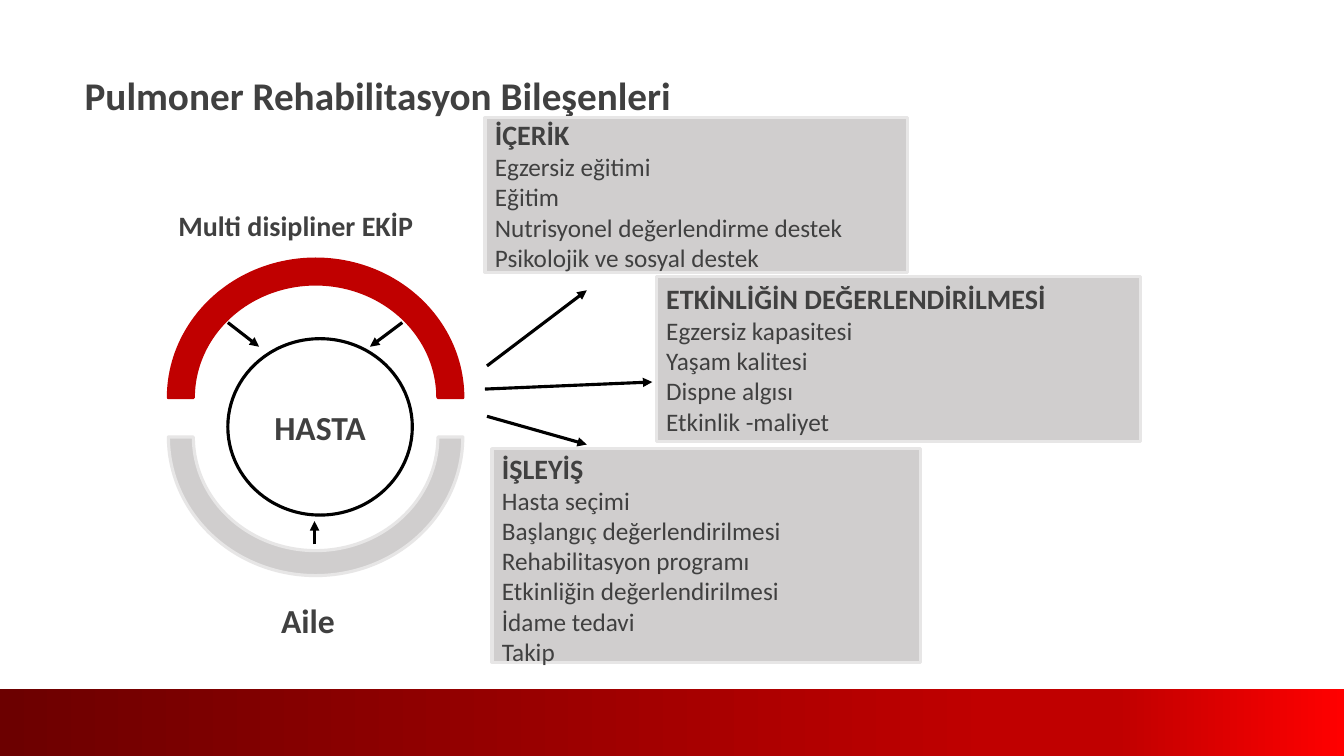
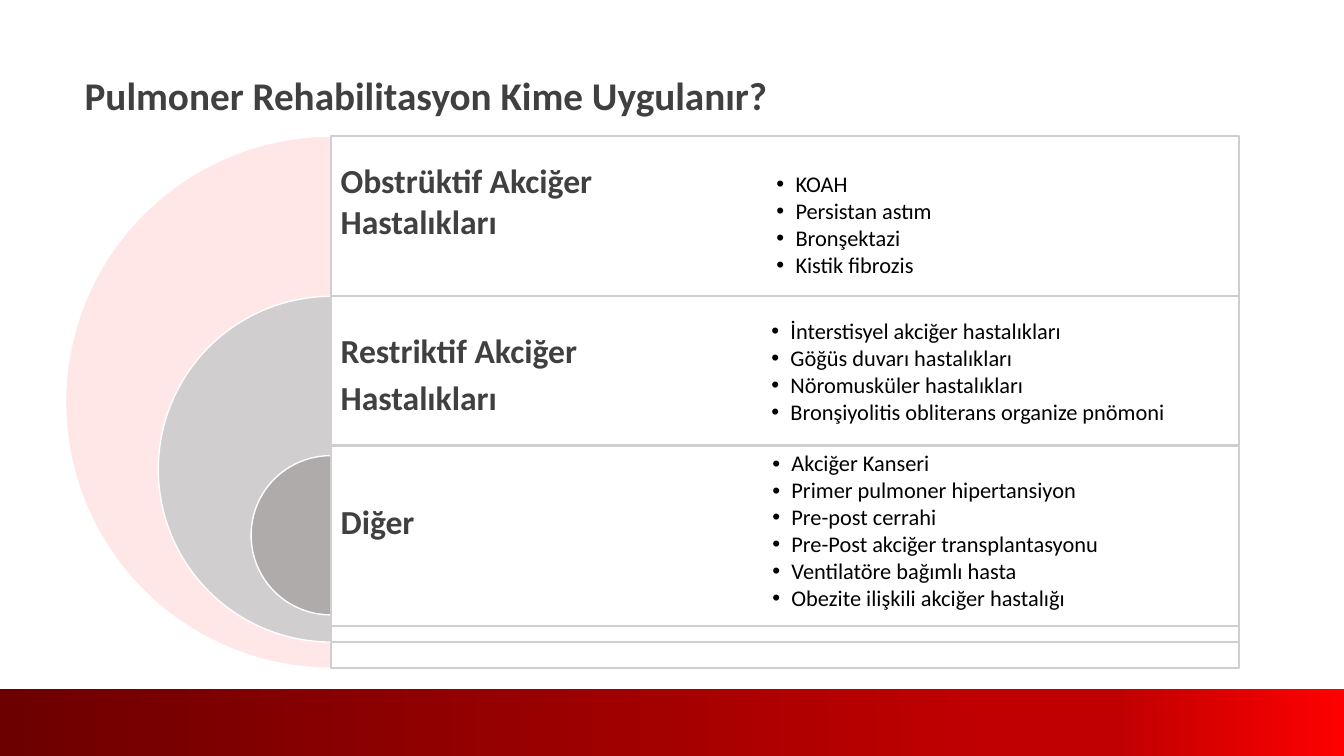
from lxml import etree
from pptx import Presentation
from pptx.dml.color import RGBColor
from pptx.enum import shapes, text
from pptx.oxml.ns import qn
from pptx.util import Inches, Pt

INK = RGBColor(0x40, 0x40, 0x40)
BLACK = RGBColor(0, 0, 0)
WHITE = RGBColor(0xFF, 0xFF, 0xFF)
RED = RGBColor(0xC0, 0, 0)
DARK_RED = RGBColor(0x6C, 0, 0)
BRIGHT_RED = RGBColor(0xFF, 0, 0)
PINK = RGBColor(0xFF, 0xE7, 0xE7)
GREY = RGBColor(0xD0, 0xCE, 0xCE)
PALE_GREY = RGBColor(0xE7, 0xE6, 0xE6)
MID_GREY = RGBColor(0xAF, 0xAB, 0xAB)
FONT = "Calibri"
BAND_STOPS = [(0, DARK_RED), (74, RED), (83, RED), (100, BRIGHT_RED)]
SHAPE = shapes.MSO_SHAPE
TOP, MIDDLE = text.MSO_ANCHOR.TOP, text.MSO_ANCHOR.MIDDLE
LEFT, CENTER = text.PP_ALIGN.LEFT, text.PP_ALIGN.CENTER


def write(tf, lines, size=18, bold=False, color=INK, head=None, align=LEFT,
          anchor=TOP, margins=(0.1, 0.05, 0.1, 0.05), spacing=1.0, after=0, bullet=False):
    tf.word_wrap = True
    tf.auto_size = text.MSO_AUTO_SIZE.NONE
    tf.vertical_anchor = anchor
    tf.margin_left, tf.margin_top, tf.margin_right, tf.margin_bottom = map(Inches, margins)
    for i, line in enumerate(lines):
        p = tf.paragraphs[0] if i == 0 else tf.add_paragraph()
        p.alignment = align
        p.line_spacing = spacing
        p.space_before = Pt(0)
        p.space_after = Pt(after)
        if bullet:
            pPr = p._p.get_or_add_pPr()
            pPr.set("marL", str(Inches(0.19)))
            pPr.set("indent", str(-Inches(0.19)))
            etree.SubElement(pPr, qn("a:buFont")).set("typeface", "Arial")
            etree.SubElement(pPr, qn("a:buChar")).set("char", "•")
        r = p.add_run()
        r.text = line
        is_head = head is not None and i == 0
        r.font.name = FONT
        r.font.size = Pt(head if is_head else size)
        r.font.bold = bold or is_head
        r.font.color.rgb = color


def draw(s, kind, at, fill=None, line=None, width=2.25):
    sp = s.shapes.add_shape(kind, *map(Inches, at))
    sp.shadow.inherit = False
    if fill is None:
        sp.fill.background()
    else:
        sp.fill.solid()
        sp.fill.fore_color.rgb = fill
    if line is None:
        sp.line.fill.background()
    else:
        sp.line.color.rgb = line
        sp.line.width = Pt(width)
    return sp


prs = Presentation()
prs.slide_width, prs.slide_height = Inches(13.33), Inches(7.5)

slides = []
for layout, title in [(5, "Pulmoner Rehabilitasyon Bileşenleri"),
                      (4, "Pulmoner Rehabilitasyon Kime Uygulanır?")]:
    s = prs.slides.add_slide(prs.slide_layouts[layout])
    sp = s.shapes.title
    sp.left, sp.top, sp.width, sp.height = map(Inches, (0.74, 0.66, 10, 0.57))
    write(sp.text_frame, [title], size=28, bold=True)
    band = draw(s, SHAPE.RECTANGLE, (0, 6.84, 13.33, 0.66))
    band.fill.gradient()
    band.fill.gradient_angle = 0
    stops = band._element.spPr.find(".//" + qn("a:gsLst"))
    for stop in list(stops):
        stops.remove(stop)
    for position, color in BAND_STOPS:
        stop = etree.SubElement(stops, qn("a:gs"), pos=str(position * 1000))
        etree.SubElement(stop, qn("a:srgbClr"), val=str(color))
    slides.append(s)
components, patients = slides

s = components
for top, color, outline, angle in [(2.57, RED, RED, 0), (2.96, GREY, PALE_GREY, 180)]:
    arc = draw(s, SHAPE.BLOCK_ARC, (1.67, top, 2.92, 2.75), color, outline)
    arc.adjustments[2] = 0.09
    arc.rotation = angle

patient = draw(s, SHAPE.OVAL, (2.26, 3.36, 1.83, 1.75), line=BLACK)
write(patient.text_frame, ["HASTA"], size=24, bold=True, align=CENTER, anchor=MIDDLE)

for label, size, at in [("Multi disipliner EKİP", 20, (1.67, 2.02, 2.7, 0.44)),
                        ("Aile", 24, (2.69, 5.9, 0.9, 0.5))]:
    sp = s.shapes.add_textbox(*map(Inches, at))
    write(sp.text_frame, [label], size=size, bold=True)

panels = [
    ((6.51, 2.74, 4.8, 1.64), 0.05, 0.05,
     ["ETKİNLİĞİN DEĞERLENDİRİLMESİ", "Egzersiz kapasitesi", "Yaşam kalitesi",
      "Dispne algısı", "Etkinlik -maliyet"]),
    ((4.81, 1.17, 4.19, 1.53), 0.05, 0.05,
     ["İÇERİK", "Egzersiz eğitimi", "Eğitim", "Nutrisyonel değerlendirme destek",
      "Psikolojik ve sosyal destek"]),
    ((4.88, 4.45, 4.25, 2.12), 0.07, 0,
     ["İŞLEYİŞ", "Hasta seçimi", "Başlangıç değerlendirilmesi", "Rehabilitasyon programı",
      "Etkinliğin değerlendirilmesi", "İdame tedavi", "Takip"]),
]
for at, above, below, lines in panels:
    sp = draw(s, SHAPE.RECTANGLE, at, GREY, PALE_GREY)
    write(sp.text_frame, lines, head=20, anchor=MIDDLE, margins=(0.1, above, 0.1, below))

for ends in [(2.26, 3.2, 2.57, 3.44), (3.99, 3.2, 3.67, 3.44), (3.12, 5.4, 3.12, 5.17),
             (4.83, 3.63, 5.82, 2.88), (4.81, 3.86, 6.47, 3.79), (4.83, 4.13, 5.82, 4.41)]:
    arrow = s.shapes.add_connector(shapes.MSO_CONNECTOR.STRAIGHT, *map(Inches, ends))
    arrow.line.color.rgb = BLACK
    arrow.line.width = Pt(2.25)
    etree.SubElement(arrow.line._get_or_add_ln(), qn("a:tailEnd"), type="triangle")
    etree.SubElement(arrow._element.spPr, qn("a:effectLst"))

s = patients
groups = [
    dict(pie=(0.65, 1.35, 5.28), color=PINK, row=(1.35, 5.28), label_height=1.58,
         heading=["Obstrüktif Akciğer", "Hastalıkları"], below=0.4, spacing=1.0, after=0,
         list_at=(7.7, 1.34),
         items=["KOAH", "Persistan astım", "Bronşektazi", "Kistik fibrozis"]),
    dict(pie=(1.57, 2.94, 3.43), color=GREY, row=(2.94, 3.43), label_height=1.58,
         heading=["Restriktif Akciğer", "Hastalıkları"], below=0.1, spacing=0.9, after=8,
         list_at=(7.65, 2.8),
         items=["İnterstisyel akciğer hastalıkları", "Göğüs duvarı hastalıkları",
                "Nöromusküler hastalıkları", "Bronşiyolitis obliterans organize pnömoni"]),
    dict(pie=(2.49, 4.52, 1.58), color=MID_GREY, row=(4.42, 1.79), label_height=1.79,
         heading=["Diğer"], below=0.4, spacing=1.0, after=0,
         list_at=(7.66, 4.38),
         items=["Akciğer Kanseri", "Primer pulmoner hipertansiyon", "Pre-post cerrahi",
                "Pre-Post akciğer transplantasyonu", "Ventilatöre bağımlı hasta",
                "Obezite ilişkili akciğer hastalığı"]),
]
title, *bodies = list(s.placeholders)
for body in bodies[len(groups):]:
    body._element.getparent().remove(body._element)

for group, body in zip(groups, bodies):
    left, top, size = group["pie"]
    pie = draw(s, SHAPE.PIE, (left, top, size, size), group["color"], WHITE, 1)
    pie.adjustments[0], pie.adjustments[1] = 54, 162
    top, height = group["row"]
    draw(s, SHAPE.RECTANGLE, (3.28, top, 9.01, height), WHITE, GREY, 1.5)
    sp = s.shapes.add_textbox(*map(Inches, (3.28, top, 4.5, group["label_height"])))
    write(sp.text_frame, group["heading"], size=24, bold=True, anchor=MIDDLE,
          margins=(0.1, 0.1, 0.1, group["below"]),
          spacing=group["spacing"], after=group["after"])
    body.left, body.top = map(Inches, group["list_at"])
    body.width, body.height = Inches(4.5), Inches(1.8)
    write(body.text_frame, group["items"], size=16, color=BLACK, anchor=MIDDLE,
          margins=(0, 0, 0, 0), spacing=0.9, after=2, bullet=True)
    s.shapes._spTree.append(body._element)

prs.save("out.pptx")
